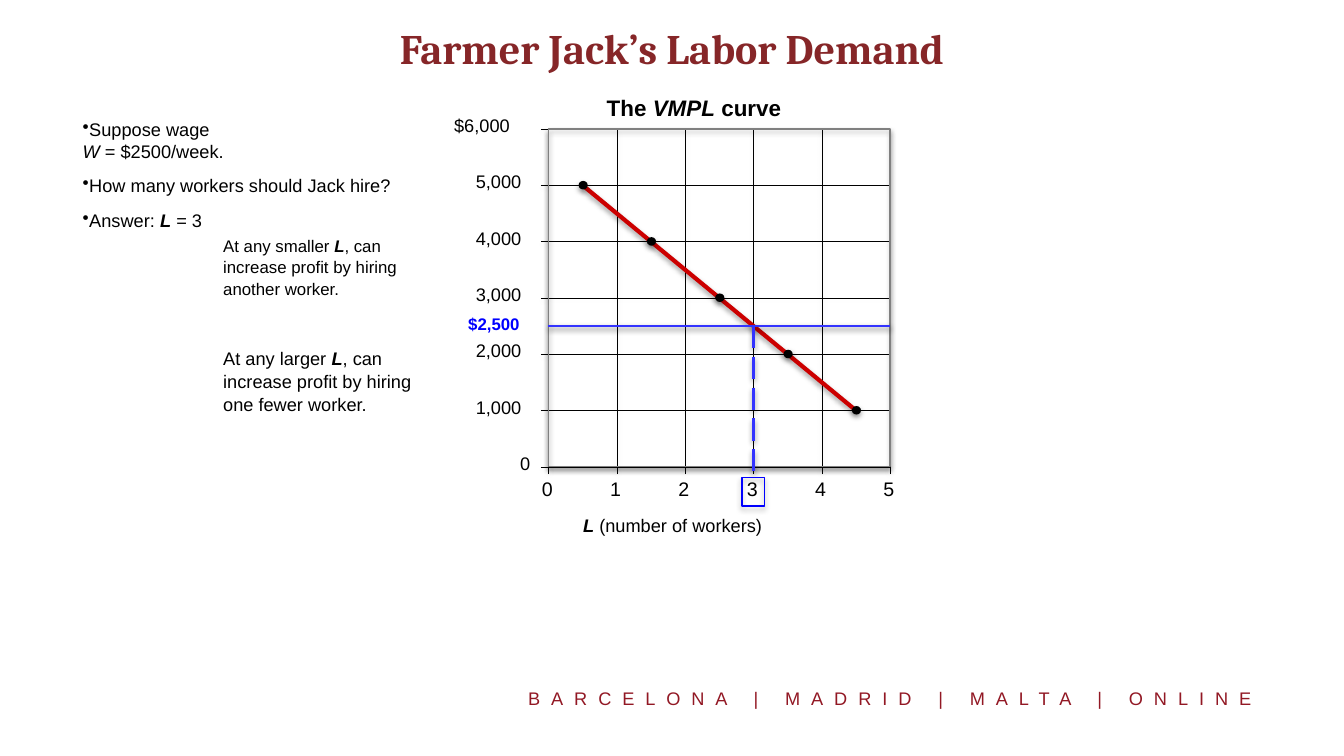
"""Build the slide on Farmer Jack's labor demand with its VMPL graph."""
from dataclasses import dataclass
from typing import Optional

import lxml.etree
import pptx
import pptx.dml.color
import pptx.enum.dml
import pptx.enum.shapes
import pptx.enum.text
import pptx.oxml.ns
import pptx.util

Cm = pptx.util.Cm
Pt = pptx.util.Pt
qn = pptx.oxml.ns.qn

BLACK, RED, BLUE, BRIGHT_BLUE = "000000", "CC0000", "3333FF", "0000FF"
PLOT_LEFT, PLOT_TOP, PLOT_WIDTH, PLOT_HEIGHT = 27.64, 6.5, 17.22, 17.02
PLOT_RIGHT, PLOT_BOTTOM = PLOT_LEFT + PLOT_WIDTH, PLOT_TOP + PLOT_HEIGHT
MAX_WORKERS, MAX_VALUE, VALUE_STEP = 5, 6000, 1000
TICK = 0.38
WAGE, HIRED = 2500, 3
POINTS = [(0.5, 5000), (1.5, 4000), (2.5, 3000), (3.5, 2000), (4.5, 1000)]


@dataclass
class Span:
    text: str
    bold: bool = False
    italic: bool = False


@dataclass
class Label:
    left: float
    top: float
    width: float
    height: float
    paragraphs: list[list[Span]]
    size: float = 26
    color: str = BLACK
    inset: float = 0.33
    line_spacing: Optional[float] = None
    bullet: bool = False
    wrap: bool = True
    tracking: float = 0


@dataclass
class Line:
    start: tuple[float, float]
    end: tuple[float, float]
    color: str = BLACK
    width: float = 0.25
    dashed: bool = False


def rgb(value: str) -> pptx.dml.color.RGBColor:
    return pptx.dml.color.RGBColor.from_string(value)


def x_at(workers: float) -> float:
    return PLOT_LEFT + PLOT_WIDTH * workers / MAX_WORKERS


def y_at(value: float) -> float:
    return PLOT_BOTTOM - PLOT_HEIGHT * value / MAX_VALUE


def add_shadow(properties, opacity: int) -> None:
    effects = properties.find(qn("a:effectLst"))
    if effects is None:
        effects = lxml.etree.SubElement(properties, qn("a:effectLst"))
    shadow = lxml.etree.SubElement(
        effects, qn("a:outerShdw"), blurRad=str(Pt(8)), dist=str(Pt(4)),
        dir="5400000", rotWithShape="0")
    color = lxml.etree.SubElement(shadow, qn("a:srgbClr"), val=BLACK)
    lxml.etree.SubElement(color, qn("a:alpha"), val=str(opacity * 1000))


def set_font(font, size: float, color: str, name: str = "Arial") -> None:
    font.name, font.size = name, Pt(size)
    font.color.rgb = rgb(color)


def set_insets(frame, inset: float) -> None:
    frame.margin_left = frame.margin_right = Cm(inset)
    frame.margin_top = frame.margin_bottom = Cm(inset)


def add_label(page, label: Label) -> None:
    box = page.shapes.add_textbox(
        Cm(label.left), Cm(label.top), Cm(label.width), Cm(label.height))
    frame = box.text_frame
    frame.word_wrap = label.wrap
    set_insets(frame, label.inset)
    for index, spans in enumerate(label.paragraphs):
        para = frame.add_paragraph() if index else frame.paragraphs[0]
        if index:
            para.space_before = Pt(18)
        if label.line_spacing:
            para.line_spacing = label.line_spacing
        if label.bullet:
            properties = para._p.get_or_add_pPr()
            properties.set("marL", "0")
            properties.set("indent", "0")
            lxml.etree.SubElement(properties, qn("a:buChar"), char="•")
        for span in spans:
            if span.text == "\v":
                para.add_line_break()
                continue
            run = para.add_run()
            run.text = span.text
            set_font(run.font, label.size, label.color)
            run.font.bold, run.font.italic = span.bold, span.italic
            if label.tracking:
                run._r.get_or_add_rPr().set("spc", str(round(label.tracking * 100)))


def add_line(page, line: Line) -> None:
    connector = page.shapes.add_connector(
        pptx.enum.shapes.MSO_CONNECTOR.STRAIGHT,
        *(Cm(value) for value in (*line.start, *line.end)))
    connector.line.color.rgb = rgb(line.color)
    connector.line.width = Pt(line.width)
    if line.dashed:
        connector.line.dash_style = pptx.enum.dml.MSO_LINE.LONG_DASH
    add_shadow(connector._element.spPr, 38)


def add_figure(page, kind, left: float, top: float, width: float, height: float,
               fill: Optional[str] = None, outline: Optional[str] = None) -> None:
    shape = page.shapes.add_shape(kind, Cm(left), Cm(top), Cm(width), Cm(height))
    if fill:
        shape.fill.solid()
        shape.fill.fore_color.rgb = rgb(fill)
    else:
        shape.fill.background()
    if outline:
        shape.line.color.rgb = rgb(outline)
        shape.line.width = Pt(2)
    else:
        shape.line.fill.background()
    shape.shadow.inherit = False
    add_shadow(shape._element.spPr, 35)


def add_graph(page) -> None:
    kinds = pptx.enum.shapes.MSO_SHAPE
    plot = (PLOT_LEFT, PLOT_TOP, PLOT_WIDTH, PLOT_HEIGHT)
    values = range(0, MAX_VALUE + 1, VALUE_STEP)
    add_figure(page, kinds.RECTANGLE, *plot, fill="FFFFFF")
    for value in values:
        add_line(page, Line((PLOT_LEFT, y_at(value)), (PLOT_RIGHT, y_at(value))))
    for workers in range(MAX_WORKERS + 1):
        add_line(page, Line((x_at(workers), PLOT_TOP), (x_at(workers), PLOT_BOTTOM)))

    ends = [(x_at(workers), y_at(value)) for workers, value in (POINTS[0], POINTS[-1])]
    add_line(page, Line(*ends, RED, 6))
    for workers, value in POINTS:
        add_figure(page, kinds.OVAL, x_at(workers) - 0.2, y_at(value) - 0.22,
                   0.46, 0.43, fill=BLACK)
    add_figure(page, kinds.RECTANGLE, *plot, outline="808080")

    for value in values:
        y = y_at(value)
        add_line(page, Line((PLOT_LEFT - TICK, y), (PLOT_LEFT, y)))
        left, width = {0: (26.21, 0.71), MAX_VALUE: (22.89, 4.09)}.get(value, (23.98, 3.07))
        text = f"${value:,}" if value == MAX_VALUE else f"{value:,}"
        add_label(page, Label(left, y - 0.73, width, 1.37, [[Span(text)]], inset=0))
    for workers in range(MAX_WORKERS + 1):
        x = x_at(workers)
        add_line(page, Line((x, PLOT_BOTTOM + TICK), (x, PLOT_BOTTOM)))
        add_label(page, Label(x - 0.33, 24.05, 0.71, 1.37, [[Span(str(workers))]], 28, inset=0))

    add_line(page, Line((PLOT_LEFT, y_at(WAGE)), (PLOT_RIGHT, y_at(WAGE)), BLUE, 4))
    add_line(page, Line((x_at(HIRED), y_at(WAGE)), (x_at(HIRED), 23.88), BLUE, 4, True))
    add_figure(page, kinds.RECTANGLE, x_at(HIRED) - 0.57, 24.08, 1.14, 1.42,
               outline=BRIGHT_BLUE)


def main() -> None:
    deck = pptx.Presentation()
    deck.slide_width, deck.slide_height = Cm(67.74), Cm(38.1)
    page = deck.slides.add_slide(deck.slide_layouts[5])

    title = page.shapes.title
    title.left, title.top, title.width, title.height = Cm(3.38), Cm(-1.8), Cm(60.96), Cm(8.38)
    frame = title.text_frame
    frame.text = "Farmer Jack’s Labor Demand"
    frame.vertical_anchor = pptx.enum.text.MSO_ANCHOR.MIDDLE
    set_insets(frame, 0.33)
    para = frame.paragraphs[0]
    para.alignment = pptx.enum.text.PP_ALIGN.CENTER
    set_font(para.runs[0].font, 60, "862628", "Cambria")
    para.runs[0].font.bold = True

    add_graph(page)
    quantity = Span("L", True, True)
    for label in (
        Label(30.25, 4.42, 11.66, 1.85,
              [[Span("The ", True), Span("VMPL", True, True), Span(" curve", True)]], 32),
        Label(29.06, 25.6, 15.34, 1.8, [[quantity, Span(" (number of workers)")]]),
        Label(23.27, 15.49, 4.06, 1.75, [[Span("$2,500", True)]], 24, BRIGHT_BLUE),
        Label(3.84, 5.64, 60.96, 29.21, [
            [Span("Suppose wage"), Span("\v"), Span("W", italic=True), Span(" = $2500/week.")],
            [Span("How many workers should Jack hire?")],
            [Span("Answer: "), quantity, Span(" = 3")]], bullet=True),
        Label(10.92, 11.51, 11.68, 7.06, [[Span("At any smaller "), quantity, Span(
            ", can increase profit by hiring another worker.")]], 24, line_spacing=1.05),
        Label(10.92, 17.12, 11.68, 7.06, [[Span("At any larger "), quantity, Span(
            ", can increase profit by hiring one fewer worker.")]], line_spacing=1.05),
        Label(26.29, 34.29, 37.72, 1.75, [[Span("BARCELONA | MADRID | MALTA | ONLINE")]],
              color="921824", wrap=False, tracking=15.6),
    ):
        add_label(page, label)
    deck.save("out.pptx")


if __name__ == "__main__":
    main()
